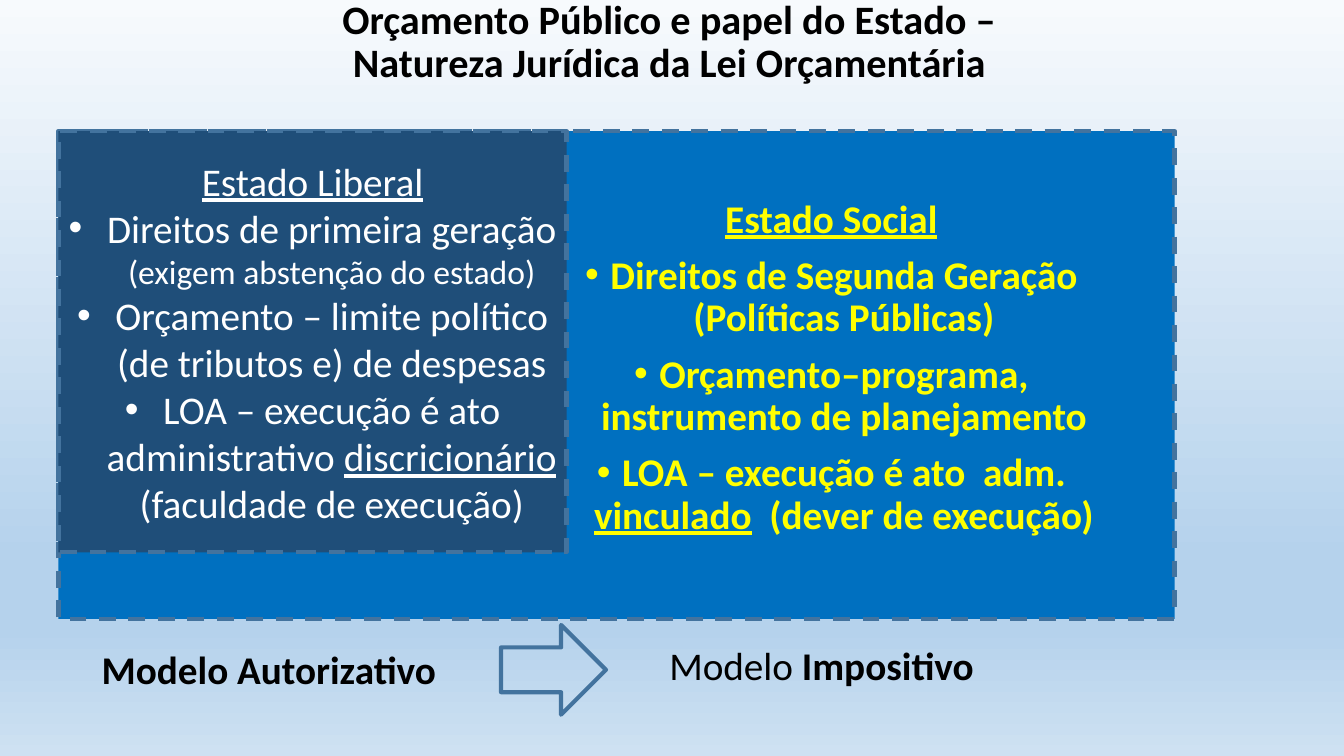
from lxml.etree import SubElement
from pptx import Presentation
from pptx.dml.color import RGBColor
from pptx.enum.dml import MSO_LINE as Dash
from pptx.enum.shapes import MSO_SHAPE as Shape
from pptx.enum.text import MSO_ANCHOR as Anchor, MSO_AUTO_SIZE as Fit, PP_ALIGN as Align
from pptx.oxml.ns import qn
from pptx.util import Pt

PX = 9144  # 100 px to the inch
LINE = {"underline": True}
BOLD = {"bold": True}
SMALL = {"size": Pt(24)}


def emu(*px):
    return [n * PX for n in px]


def color(code):
    return RGBColor.from_string(code)


class Deck:
    font = "Calibri"
    size = 28
    edge = "43739E"

    def __init__(self, wide, high):
        self.prs = Presentation()
        self.prs.slide_width, self.prs.slide_height = emu(wide, high)
        self.slide = self.prs.slides.add_slide(self.prs.slide_layouts[6])

    def back(self, stops):
        """Fill the background from top to bottom with (percent, colour) stops."""
        fill = self.slide.background.fill
        fill.gradient()
        fill.gradient_angle = 270
        group = self.slide.element.find(".//" + qn("a:gsLst"))
        for old in list(group):
            group.remove(old)
        for pos, code in stops:
            stop = SubElement(group, qn("a:gs"), pos=str(pos * 1000))
            SubElement(stop, qn("a:srgbClr"), val=code)

    def shape(self, kind, box, fill=None, dash=None):
        item = self.slide.shapes.add_shape(kind, *emu(*box))
        item.shadow.inherit = False
        if fill:
            item.fill.solid()
            item.fill.fore_color.rgb = color(fill)
        else:
            item.fill.background()
        item.line.color.rgb = color(self.edge)
        item.line.width = Pt(3)
        if dash:
            item.line.dash_style = dash
        return item

    def text(self, box, paras, anchor=Anchor.MIDDLE, **style):
        item = self.slide.shapes.add_textbox(*emu(*box))
        self.fill(item, paras, anchor, **style)
        return item

    def label(self, box, paras, **style):
        item = self.text(box, paras, Anchor.TOP, align=Align.LEFT, **style)
        item.text_frame.auto_size = Fit.SHAPE_TO_FIT_TEXT

    def fill(self, item, paras, anchor=Anchor.MIDDLE, align=Align.CENTER,
             hang=0, space=None, before=None, **style):
        """Set (text, mark) pairs; every second part between bars gets the mark.

        With a hang, all paragraphs but the first have a bullet.
        """
        frame = item.text_frame
        frame.word_wrap = True
        frame.vertical_anchor = anchor
        for n, (text, mark) in enumerate(paras):
            para = frame.add_paragraph() if n else frame.paragraphs[0]
            para.alignment = align
            para.line_spacing = space
            para.space_before = before
            if hang:
                self.bullet(para, hang, n > 0)
            for k, part in enumerate(text.split("|")):
                if part:
                    self.run(para, part, style, mark if k % 2 else {})

    def run(self, para, part, style, mark):
        run = para.add_run()
        run.text = part.rstrip("\v")
        if part.endswith("\v"):
            para.add_line_break()
        font = run.font
        font.name = self.font
        look = {"size": Pt(self.size), "bold": False, "underline": False,
                "ink": "000000", **style, **mark}
        font.size = look["size"]
        font.bold = look["bold"]
        font.underline = look["underline"]
        font.color.rgb = color(look["ink"])

    def bullet(self, para, hang, shown):
        props = para._p.get_or_add_pPr()
        props.set("marL", str(hang * PX))
        props.set("indent", str(-hang * PX))
        if shown:
            SubElement(props, qn("a:buFont"), typeface="Arial")
            SubElement(props, qn("a:buChar"), char="•")
        else:
            SubElement(props, qn("a:buNone"))


def main():
    deck = Deck(1333, 750)
    deck.back([(0, "F7FAFD"), (74, "B5D2EC"), (83, "B5D2EC"), (100, "CEE1F2")])

    deck.shape(Shape.RECTANGLE, (58, 130, 1107, 484), "0070C0", Dash.DASH)
    deck.text((51, -3, 1226, 91), [
        (" Orçamento Público e papel do Estado – \v|Natureza Jurídica da Lei Orçamentária", {}),
    ], space=0.9, size=Pt(28.8), bold=True)

    liberal = deck.shape(Shape.RECTANGLE, (58, 130, 504, 418), "1F4E79", Dash.DASH)
    deck.fill(liberal, [
        ("|Estado Liberal", LINE),
        ("Direitos de primeira geração |(exigem abstenção do estado)", SMALL),
        ("Orçamento – limite político (de tributos e) de despesas", {}),
        ("LOA – execução é ato administrativo |discricionário| (faculdade de execução)", LINE),
    ], hang=38, ink="FFFFFF")

    deck.text((551, 100, 547, 531), [
        ("|Estado Social", LINE),
        ("Direitos de Segunda Geração (Políticas Públicas)", {}),
        ("Orçamento–programa, instrumento de planejamento", {}),
        ("LOA – execução é ato  adm. |vinculado|  (dever de execução)", LINE),
    ], hang=25, space=0.9, before=Pt(10), ink="FFFF00", bold=True)

    deck.shape(Shape.RIGHT_ARROW, (497, 620, 104, 89))
    deck.label((91, 635, 433, 57), [("|Modelo Autorizativo", BOLD)])
    deck.label((654, 631, 433, 57), [("Modelo |Impositivo", BOLD)])

    deck.prs.save("out.pptx")


if __name__ == "__main__":
    main()
